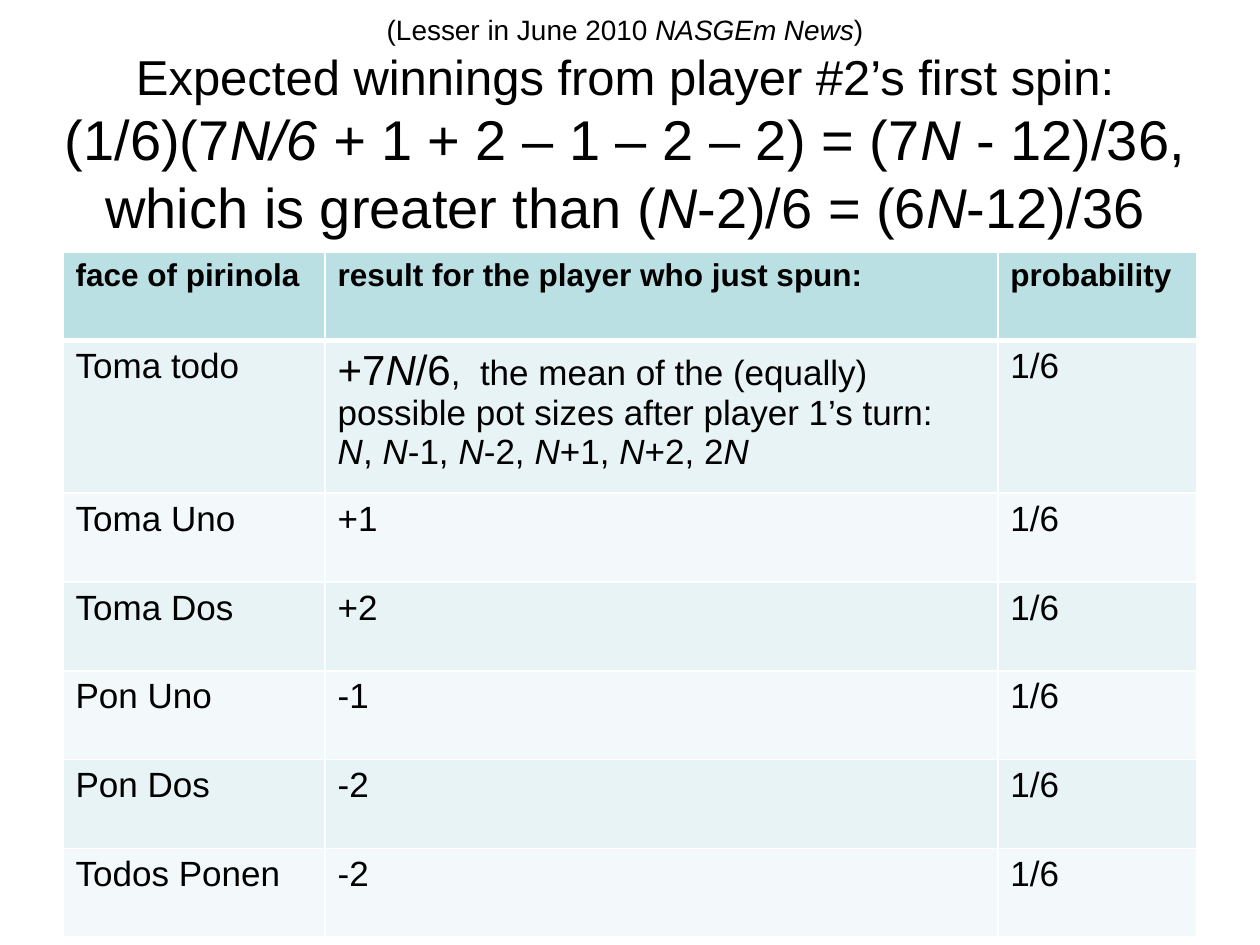
from dataclasses import dataclass

from lxml import etree
from pptx import Presentation
from pptx.dml.color import RGBColor
from pptx.enum.text import MSO_ANCHOR, PP_ALIGN
from pptx.oxml.ns import qn
from pptx.util import Inches, Pt

CENTER = PP_ALIGN.CENTER
MIDDLE = MSO_ANCHOR.MIDDLE


@dataclass(frozen=True)
class Theme:
    font: str = "Arial"
    ink: str = "000000"
    line: str = "FFFFFF"
    head: str = "BBE0E3"
    bands: tuple = ("E7F3F4", "F3F9FA")
    note: int = 16
    lead: int = 28
    sum: int = 32
    label: int = 18
    body: int = 20
    gain: int = 24


THEME = Theme()

TITLE = [
    ("(Lesser in June 2010 *NASGEm News*)", THEME.note),
    ("Expected winnings from player #2’s first spin:", THEME.lead),
    ("(1/6)(7*N/6 + *1 + 2 – 1 – 2 – 2) = (7*N* - 12)/36, "
     "which is greater than (*N*-2)/6 = (6*N*-12)/36", THEME.sum),
]
HEADS = ["face of pirinola", "result for the player who just spun:", "probability"]
MEAN = ",  the mean of the (equally) possible pot sizes after player 1’s turn:"
POTS = "*N*, *N*-1, *N*-2, *N*+1, *N*+2, 2*N*"
FACES = [
    ("Toma todo", None),
    ("Toma Uno", "+1"),
    ("Toma Dos", "+2"),
    ("Pon Uno", "-1"),
    ("Pon Dos", "-2"),
    ("Todos Ponen", "-2"),
]
ODDS = "1/6"


def write(para, text, size, bold=False):
    """Fill a paragraph; text between asterisks is italic."""
    font = para.font
    font.name, font.size, font.bold = THEME.font, Pt(size), bold
    font.color.rgb = RGBColor.from_string(THEME.ink)
    return add_runs(para, text)


def add_runs(para, text, size=None):
    for i, part in enumerate(text.split("*")):
        if part:
            run = para.add_run()
            run.text = part
            run.font.italic = True if i % 2 else None
            if size:
                run.font.size = Pt(size)


def set_edges(cell, top, bottom):
    props = cell._tc.get_or_add_tcPr()
    for tag, width in (("lnL", 1), ("lnR", 1), ("lnT", top), ("lnB", bottom)):
        edge = etree.SubElement(props, qn("a:" + tag), w=str(Pt(width)))
        fill = etree.SubElement(edge, qn("a:solidFill"))
        etree.SubElement(fill, qn("a:srgbClr"), val=THEME.line)


def add_title(slide, left, top, width, height):
    frame = slide.shapes.add_textbox(left, top, width, height).text_frame
    frame.word_wrap = True
    frame.vertical_anchor = MIDDLE
    for i, (text, size) in enumerate(TITLE):
        para = frame.add_paragraph() if i else frame.paragraphs[0]
        para.alignment = CENTER
        write(para, text, size)


def write_mean(frame):
    para = frame.paragraphs[0]
    write(para, "", THEME.body)
    add_runs(para, "+7*N*/6", THEME.gain)
    add_runs(para, MEAN)
    write(frame.add_paragraph(), POTS, THEME.body)


def add_grid(slide, left, top, width, height):
    rows = [HEADS] + [(face, gain, ODDS) for face, gain in FACES]
    grid = slide.shapes.add_table(len(rows), len(HEADS), left, top, width, height).table

    # Fixed outer columns; the middle one takes the rest
    first, last = Inches(2.08), Inches(1.58)
    for col, size in zip(grid.columns, (first, width - first - last, last)):
        col.width = size

    # Equal rows, but for the tall one with the mean
    tall = Inches(1.21)
    short = (height - tall) // (len(rows) - 1)
    for i, row in enumerate(rows):
        grid.rows[i].height = tall if i == 1 else short
        for j, text in enumerate(row):
            cell = grid.cell(i, j)
            set_edges(cell, 3 if i == 1 else 1, 1 if i else 3)
            cell.fill.solid()
            shade = THEME.bands[(i - 1) % 2] if i else THEME.head
            cell.fill.fore_color.rgb = RGBColor.from_string(shade)
            if text is None:
                write_mean(cell.text_frame)
            else:
                write(cell.text_frame.paragraphs[0], text,
                      THEME.body if i else THEME.label, bold=i == 0)


def main():
    deck = Presentation()
    deck.slide_width, deck.slide_height = Inches(10), Inches(7.5)
    slide = deck.slides.add_slide(deck.slide_layouts[6])
    add_title(slide, Inches(0.17), Inches(0.08), Inches(9.58), Inches(1.84))
    add_grid(slide, Inches(0.5), Inches(2), Inches(9), Inches(5.44))
    deck.save("out.pptx")


if __name__ == "__main__":
    main()
